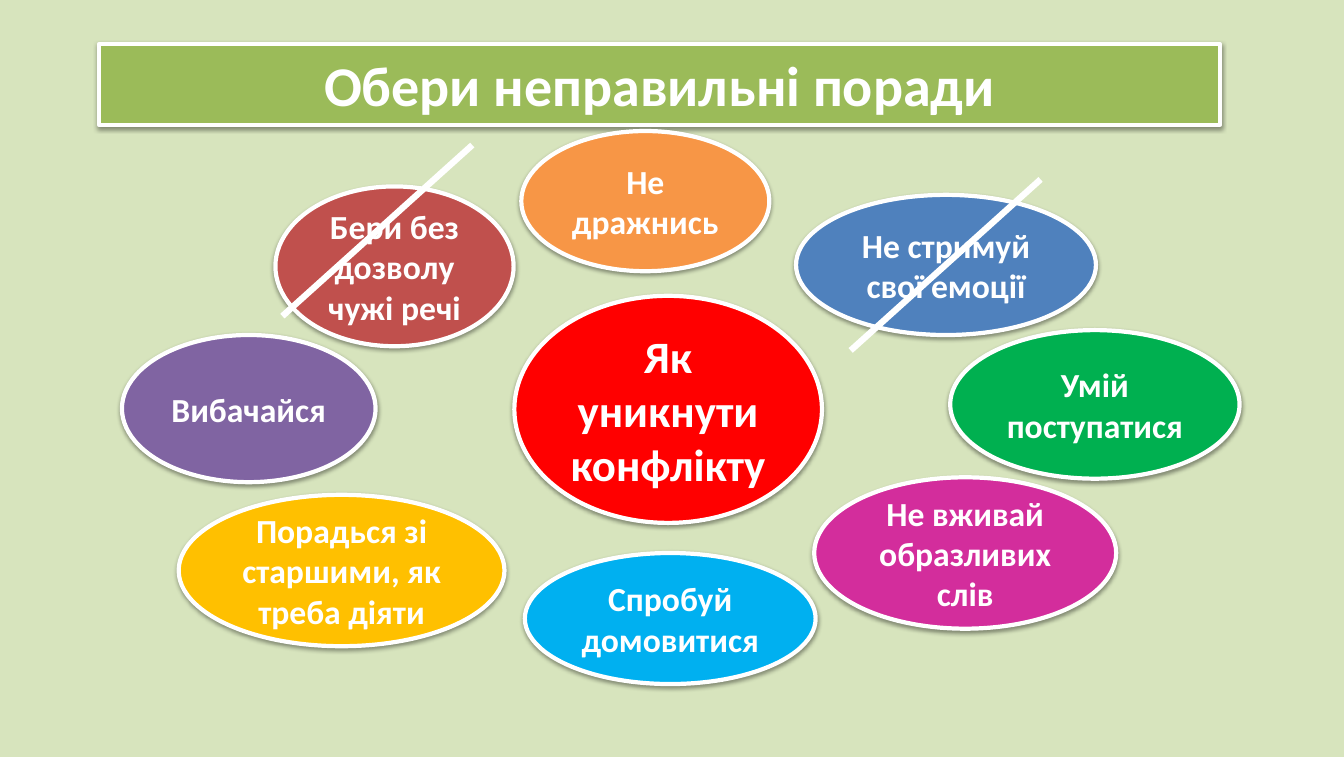
import dataclasses

import pptx
import pptx.dml.color
import pptx.enum.shapes
import pptx.enum.text
import pptx.oxml.ns
import pptx.util
from lxml import etree

Pt = pptx.util.Pt
qn = pptx.oxml.ns.qn


@dataclasses.dataclass(frozen=True)
class Theme:
    font: str = "Calibri"
    background: str = "D7E4BD"
    title_fill: str = "9BBB59"
    center_fill: str = "FF0000"
    light: str = "FFFFFF"
    shadow: str = "000000"
    title_size: float = 40
    center_size: float = 32
    tip_size: float = 24
    outline: float = 3
    strike: float = 4.5


THEME = Theme()

# text, fill, left, top, width, height
TIPS = [
    ("Не стримуй свої емоції", "4F81BD", 568, 139, 214, 100),
    ("Бери без дозволу чужі речі", "C0504D", 196.5, 133, 170, 114),
    ("Не дражнись", "F79646", 372, 93.5, 177, 100),
    ("Спробуй домовитися", "00B0F0", 374.5, 394.5, 207.5, 93.5),
    ("Вибачайся", "8064A2", 87, 239, 181, 105),
    ("Не вживай образливих слів", "D32D9C", 581, 340.5, 215.5, 108),
    ("Порадься зі старшими, як треба діяти", "FFC000", 127.5, 353, 232.5, 108),
    ("Умій поступатися", "00B050", 678, 235.5, 206.5, 106),
]
STRIKE_STARTS = [(337, 103.5), (742.5, 128)]
STRIKE_DX, STRIKE_DY = -135.5, 122


def rgb(value):
    return pptx.dml.color.RGBColor.from_string(value)


def add_shadow(sp):
    """Give the shape a soft shadow that falls straight down."""
    sp.shadow.inherit = False
    effects = sp._element.spPr.find(qn("a:effectLst"))
    outer = etree.SubElement(
        effects, qn("a:outerShdw"), blurRad=str(Pt(3.1)), dist=str(Pt(1.6)),
        dir="5400000", rotWithShape="0")
    color = etree.SubElement(outer, qn("a:srgbClr"), val=THEME.shadow)
    etree.SubElement(color, qn("a:alpha"), val="38000")


def style_card(sp, text, fill, size):
    """Apply the look shared by the title bar and all ellipses."""
    sp.fill.solid()
    sp.fill.fore_color.rgb = rgb(fill)
    sp.line.color.rgb = rgb(THEME.light)
    sp.line.width = Pt(THEME.outline)
    add_shadow(sp)
    tf = sp.text_frame
    tf.text = text
    tf.word_wrap = True
    tf.auto_size = pptx.enum.text.MSO_AUTO_SIZE.NONE
    tf.vertical_anchor = pptx.enum.text.MSO_ANCHOR.MIDDLE
    p = tf.paragraphs[0]
    p.alignment = pptx.enum.text.PP_ALIGN.CENTER
    font = p.runs[0].font
    font.name = THEME.font
    font.size = Pt(size)
    font.bold = True
    font.color.rgb = rgb(THEME.light)


def set_title(s, text, left, top, width, height):
    sp = s.shapes.title
    sp.left, sp.top, sp.width, sp.height = map(Pt, (left, top, width, height))
    style_card(sp, text, THEME.title_fill, THEME.title_size)


def add_ellipse(s, text, fill, left, top, width, height, size=THEME.tip_size):
    sp = s.shapes.add_shape(pptx.enum.shapes.MSO_SHAPE.OVAL,
                            *map(Pt, (left, top, width, height)))
    style_card(sp, text, fill, size)


def add_strike(s, x, y):
    """Cross out a wrong tip with a diagonal line."""
    line = s.shapes.add_connector(
        pptx.enum.shapes.MSO_CONNECTOR.STRAIGHT,
        Pt(x), Pt(y), Pt(x + STRIKE_DX), Pt(y + STRIKE_DY))
    line.line.color.rgb = rgb(THEME.light)
    line.line.width = Pt(THEME.strike)
    etree.SubElement(line._element.spPr, qn("a:effectLst"))


def main():
    prs = pptx.Presentation()
    prs.slide_width, prs.slide_height = Pt(959), Pt(540)
    s = prs.slides.add_slide(prs.slide_layouts.get_by_name("Title Only"))
    s.background.fill.solid()
    s.background.fill.fore_color.rgb = rgb(THEME.background)

    set_title(s, "Обери неправильні поради", 70.5, 31.5, 800, 57.5)
    for tip in TIPS:
        add_ellipse(s, *tip)
    add_ellipse(s, "Як уникнути конфлікту", THEME.center_fill,
                367, 211, 219.5, 162, THEME.center_size)
    for start in STRIKE_STARTS:
        add_strike(s, *start)

    prs.save("out.pptx")


if __name__ == "__main__":
    main()
